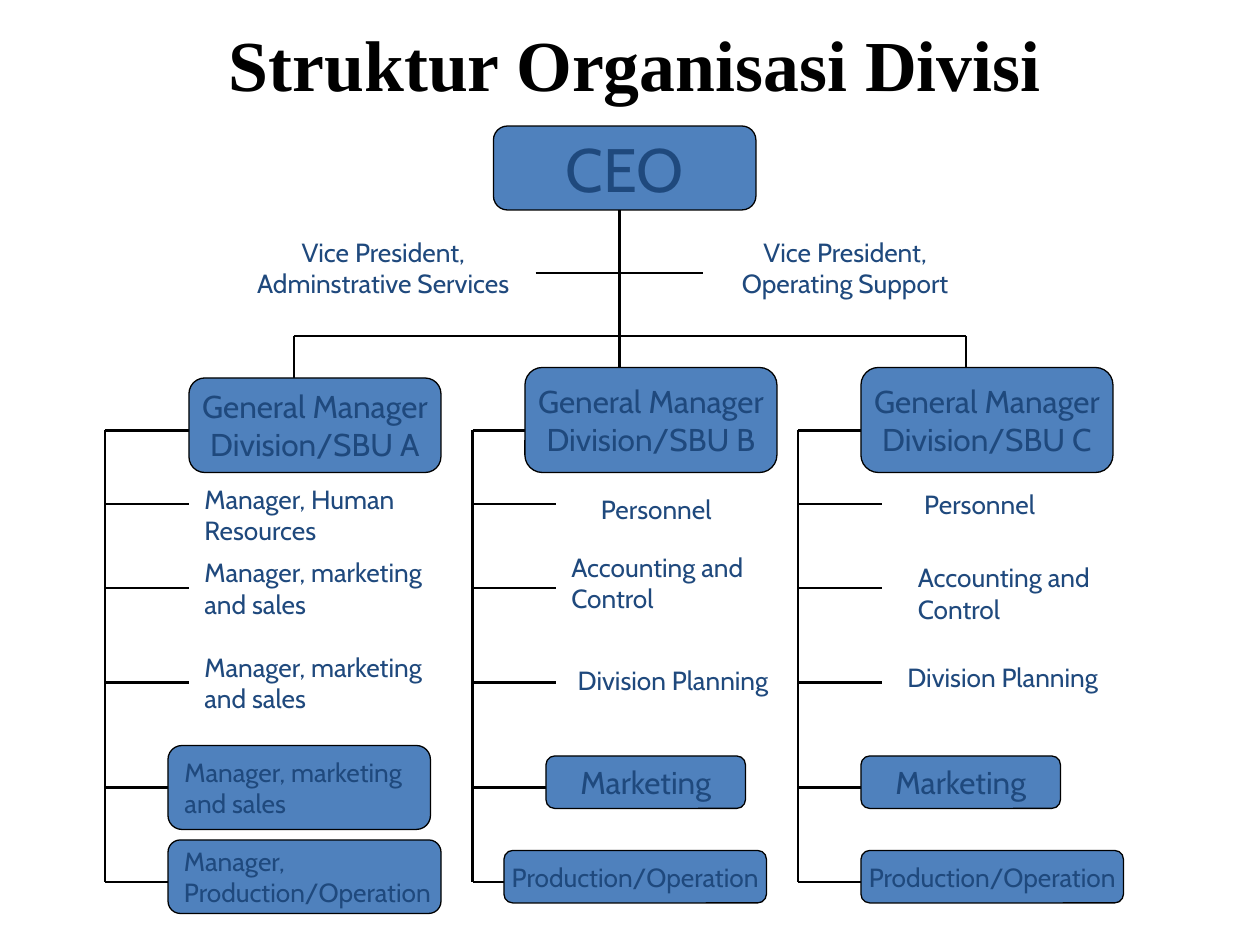
from dataclasses import dataclass

import pptx
import pptx.dml.color
import pptx.enum.shapes
import pptx.enum.text
import pptx.oxml.ns
import pptx.util
from lxml import etree

Align = pptx.enum.text.PP_ALIGN
Rgb = pptx.dml.color.RGBColor
COLUMNS, ROWS = 120, 90


@dataclass(frozen=True)
class Theme:
    fill: Rgb = Rgb(0x4F, 0x81, 0xBD)
    text: Rgb = Rgb(0x1F, 0x49, 0x7D)
    ink: Rgb = Rgb(0, 0, 0)
    title_font: str = "Times New Roman"
    body_font: str = "Cabin"
    title_size: int = 41
    top_size: int = 35
    head_size: int = 18
    label_size: int = 15
    connector_width: float = 1.5
    outline_width: float = 0.75


class OrgChart:
    """Draws on one page; every length is in columns and rows of the grid."""

    def __init__(self, deck, theme):
        self.theme = theme
        self.page = deck.slides.add_slide(deck.slide_layouts[5])
        self.column = deck.slide_width / COLUMNS
        self.row = deck.slide_height / ROWS

    def scale(self, x, y):
        return round(x * self.column), round(y * self.row)

    def style(self, para, name, size, color, align, bold=False):
        para.alignment = align
        para.space_before = pptx.util.Pt(0)
        para.font.name = name
        para.font.size = pptx.util.Pt(size)
        para.font.bold = bold
        para.font.color.rgb = color

    def title(self, text, x, y, width, height):
        box = self.page.shapes.title
        box.left, box.top = self.scale(x, y)
        box.width, box.height = self.scale(width, height)
        frame = box.text_frame
        frame.text = text
        frame.auto_size = pptx.enum.text.MSO_AUTO_SIZE.NONE
        frame.vertical_anchor = pptx.enum.text.MSO_ANCHOR.MIDDLE
        self.style(frame.paragraphs[0], self.theme.title_font,
                   self.theme.title_size, self.theme.ink, Align.CENTER, True)

    def line(self, x1, y1, x2, y2):
        connector = self.page.shapes.add_connector(
            pptx.enum.shapes.MSO_CONNECTOR.STRAIGHT,
            *self.scale(x1, y1), *self.scale(x2, y2))
        connector.line.color.rgb = self.theme.ink
        connector.line.width = pptx.util.Pt(self.theme.connector_width)
        etree.SubElement(connector.element.spPr, pptx.oxml.ns.qn("a:effectLst"))

    def label(self, paragraphs, x, y, width, height, size=None, align=Align.CENTER):
        """Add an unfilled box; a newline inside a paragraph is a line break."""
        box = self.page.shapes.add_shape(
            pptx.enum.shapes.MSO_SHAPE.FLOWCHART_ALTERNATE_PROCESS,
            *self.scale(x, y), *self.scale(width, height))
        box.shadow.inherit = False
        box.fill.background()
        box.line.fill.background()
        frame = box.text_frame
        frame.word_wrap = False
        frame.vertical_anchor = pptx.enum.text.MSO_ANCHOR.MIDDLE
        for index, text in enumerate(paragraphs):
            para = frame.add_paragraph() if index else frame.paragraphs[0]
            para.text = text
            self.style(para, self.theme.body_font, size or self.theme.label_size,
                       self.theme.text, align)
        return box

    def box(self, *content, **options):
        """Add a label with the theme's fill and outline."""
        box = self.label(*content, **options)
        box.fill.solid()
        box.fill.fore_color.rgb = self.theme.fill
        box.line.color.rgb = self.theme.ink
        box.line.width = pptx.util.Pt(self.theme.outline_width)

    def branch(self, spine, stub_rows, length):
        self.line(spine, stub_rows[0], spine, stub_rows[-1])
        for row in stub_rows:
            self.line(spine, row, spine + length, row)


STUB_ROWS = (41, 48, 56, 65, 75, 84)
SPINES = (10, 45, 76)
HEADS = (("A", 18, 36), ("B", 50, 35), ("C", 82, 35))
HEAD_BOTTOM = 45
TRUNK, BAR_ROW = 59, 32
BAR_ENDS = ((28, 36), (92, 35))

STAFF_LEFT = (
    ("Manager, Human\nResources", 18, 46, 25, 6),
    ("Manager, marketing\nand sales", 18, 53, 25, 6),
    ("Manager, marketing\nand sales", 18, 62, 24, 6),
    ("Accounting and\nControl", 53, 53, 19, 5),
    ("Accounting and\nControl", 86, 54, 19, 5),
)
STAFF_CENTERED = (
    ("Vice President,\nAdminstrative Services", 27, 23, 19, 5),
    ("Vice President,\nOperating Support", 71, 23, 19, 5),
    ("Personnel", 53, 46, 19, 5),
    ("Personnel", 83.8, 45.5, 19, 5),
    ("Division Planning", 54.6, 62.3, 19, 5),
    ("Division Planning", 86, 62, 19, 5),
)
UNITS_LEFT = (
    ("Manager, marketing\nand sales", 16, 71, 25, 8),
    ("Manager,\nProduction/Operation", 16, 80, 26, 7),
)
UNITS_CENTERED = (("Production/Operation", 48, 81, 25, 5),
                  ("Production/Operation", 82, 81, 25, 5))
MARKETING_LEFTS = (52, 82)


def main():
    deck = pptx.Presentation()
    deck.slide_width = pptx.util.Inches(10)
    deck.slide_height = pptx.util.Inches(7.5)
    theme = Theme()
    chart = OrgChart(deck, theme)
    chart.title("Struktur Organisasi Divisi", 7, 0, 107, 12)

    chart.line(TRUNK, 20, TRUNK, 35)
    chart.line(51, 26, 67, 26)
    chart.line(BAR_ENDS[0][0], BAR_ROW, BAR_ENDS[1][0], BAR_ROW)
    for x, bottom in BAR_ENDS:
        chart.line(x, BAR_ROW, x, bottom)
    for spine in SPINES:
        chart.branch(spine, STUB_ROWS, 8)

    chart.box(["CEO"], 47, 12, 25, 8, size=theme.top_size)
    for letter, left, top in HEADS:
        chart.box(["General Manager", f"Division/SBU {letter}"],
                  left, top, 24, HEAD_BOTTOM - top, size=theme.head_size)
    for left in MARKETING_LEFTS:
        chart.box(["Marketing"], left, 72, 19, 5, size=theme.head_size)

    for draw, entries, align in (
        (chart.box, UNITS_LEFT, Align.LEFT),
        (chart.box, UNITS_CENTERED, Align.CENTER),
        (chart.label, STAFF_LEFT, Align.LEFT),
        (chart.label, STAFF_CENTERED, Align.CENTER),
    ):
        for text, *place in entries:
            draw([text], *place, align=align)

    deck.save("out.pptx")


if __name__ == "__main__":
    main()
